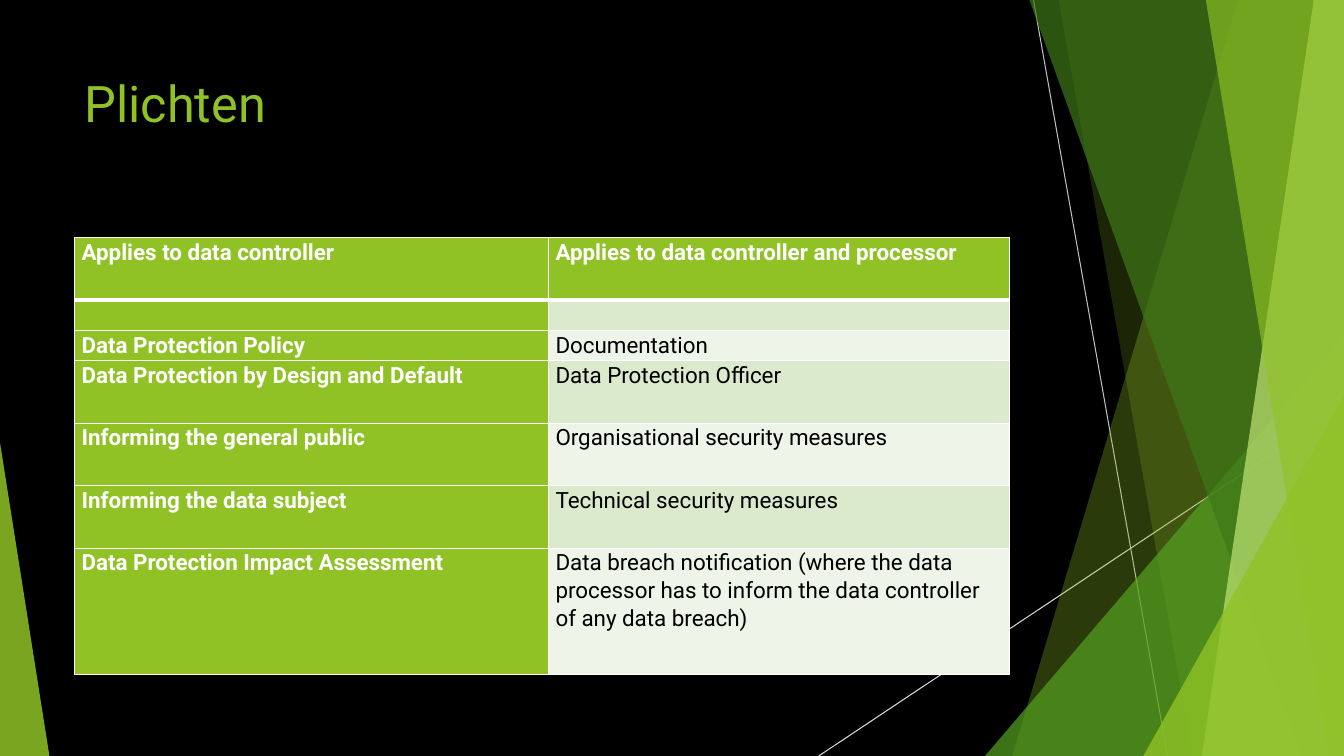
from dataclasses import dataclass
from lxml.etree import SubElement
from pptx import Presentation
from pptx.dml.color import RGBColor
from pptx.enum.shapes import MSO_CONNECTOR, MSO_SHAPE
from pptx.oxml.ns import qn
from pptx.util import Inches, Pt

COLORS = {
    "black": "000000", "white": "FFFFFF", "lime": "90C226",
    "green": "54A021", "forest": "3F7819", "pale": "C0E474",
    "silver": "BFBFBF", "light": "D9D9D9", "odd": "DBE9CD", "even": "EEF4E8",
}
FONT = "Roboto"
WIDTH, HEIGHT = 13.33, 7.5


@dataclass
class Ray:
    start: tuple[float, float]
    end: tuple[float, float]
    color: str


@dataclass
class Band:
    top: float
    base: float
    color: str
    alpha: int


@dataclass
class Wedge:
    left: float
    top: float
    width: float
    tip: float
    color: str
    alpha: int


RAYS = [
    Ray((10.25, 0), (11.58, HEIGHT), "silver"),
    Ray((WIDTH, 4.03), (8.12, HEIGHT), "light"),
]
PANELS = [
    Band(12.28, 10.04, "lime", 30),
    Band(10.5, 11.83, "lime", 20),
    Wedge(9.77, 3.33, 3.56, 1, "green", 72),
    Band(10.21, 12.91, "forest", 70),
    Band(13.03, 11.92, "pale", 70),
    Band(11.96, 13.18, "lime", 65),
    Wedge(11.34, 3.93, 1.99, 1, "lime", 80),
    Wedge(0, 4.39, 0.49, 0, "lime", 85),
]
DUTIES = [
    ("Applies to data controller", "Applies to data controller and processor"),
    ("", ""),
    ("Data Protection Policy", "Documentation"),
    ("Data Protection by Design and Default", "Data Protection Officer"),
    ("Informing the general public", "Organisational security measures"),
    ("Informing the data subject", "Technical security measures"),
    ("Data Protection Impact Assessment",
     "Data breach notification (where the data processor has to inform "
     "the data controller of any data breach)"),
]
COLS = [4.7, 4.57]
ROWS = [0.62, 0.3, 0.3, 0.62, 0.62, 0.62, 1.25]


def get_color(name: str) -> RGBColor:
    return RGBColor.from_string(COLORS[name])


def paint(shape, color: str, alpha: int) -> None:
    shape.shadow.inherit = False
    shape.line.fill.background()
    shape.fill.solid()
    shape.fill.fore_color.rgb = get_color(color)
    tone = shape.fill._xPr.find(qn("a:solidFill"))[0]
    SubElement(tone, qn("a:alpha"), val=str(alpha * 1000))


def draw_ray(slide, ray: Ray) -> None:
    ends = [Inches(v) for v in ray.start + ray.end]
    line = slide.shapes.add_connector(MSO_CONNECTOR.STRAIGHT, *ends)
    line.line.color.rgb = get_color(ray.color)
    line.line.width = Pt(0.75)
    SubElement(line._element.spPr, qn("a:effectLst"))


def draw_band(slide, band: Band) -> None:
    pen = slide.shapes.build_freeform(Inches(band.top), 0)
    corners = [(WIDTH, 0), (WIDTH, HEIGHT), (band.base, HEIGHT)]
    pen.add_line_segments([(Inches(x), Inches(y)) for x, y in corners], close=True)
    paint(pen.convert_to_shape(), band.color, band.alpha)


def draw_wedge(slide, wedge: Wedge) -> None:
    shape = slide.shapes.add_shape(
        MSO_SHAPE.ISOSCELES_TRIANGLE, Inches(wedge.left), Inches(wedge.top),
        Inches(wedge.width), Inches(HEIGHT - wedge.top))
    shape.adjustments[0] = wedge.tip
    paint(shape, wedge.color, wedge.alpha)


def style_font(font, size: int, color: str, bold: bool) -> None:
    font.name = FONT
    font.size = Pt(size)
    font.bold = bold
    font.color.rgb = get_color(color)


def draw_title(slide) -> None:
    box = slide.shapes.add_textbox(Inches(0.74), Inches(0.67), Inches(9.4), Inches(1.44))
    box.text_frame.word_wrap = True
    box.text_frame.text = "Plichten"
    style_font(box.text_frame.paragraphs[0].runs[0].font, 36, "lime", False)


def add_edges(cell, row: int) -> None:
    props = cell._tc.get_or_add_tcPr()
    widths = {"L": 1, "R": 1, "T": 3 if row == 1 else 1, "B": 3 if row == 0 else 1}
    for side, width in widths.items():
        edge = SubElement(props, qn(f"a:ln{side}"), w=str(Pt(width)))
        fill = SubElement(edge, qn("a:solidFill"))
        SubElement(fill, qn("a:srgbClr"), val=COLORS["white"])


def fill_cell(cell, row: int, col: int, text: str) -> None:
    strong = row == 0 or col == 0
    add_edges(cell, row)
    cell.fill.solid()
    shade = "lime" if strong else "odd" if row % 2 else "even"
    cell.fill.fore_color.rgb = get_color(shade)
    cell.margin_left = cell.margin_right = Inches(0.07)
    cell.margin_top = cell.margin_bottom = 0
    cell.text_frame.text = text
    para = cell.text_frame.paragraphs[0]
    if text:
        para.line_spacing = 1.07
        para.space_after = Pt(8)
    for run in para.runs:
        style_font(run.font, 16, "white" if strong else "black", strong)


def draw_table(slide) -> None:
    table = slide.shapes.add_table(
        len(ROWS), len(COLS), Inches(0.74), Inches(2.36),
        Inches(sum(COLS)), Inches(sum(ROWS))).table
    for col, width in zip(table.columns, COLS):
        col.width = Inches(width)
    for row, height in zip(table.rows, ROWS):
        row.height = Inches(height)
    for r, texts in enumerate(DUTIES):
        for c, text in enumerate(texts):
            fill_cell(table.cell(r, c), r, c, text)


def main() -> None:
    deck = Presentation()
    deck.slide_width, deck.slide_height = Inches(WIDTH), Inches(HEIGHT)
    slide = deck.slides.add_slide(deck.slide_layouts[6])
    slide.background.fill.solid()
    slide.background.fill.fore_color.rgb = get_color("black")
    for ray in RAYS:
        draw_ray(slide, ray)
    for panel in PANELS:
        if isinstance(panel, Band):
            draw_band(slide, panel)
        else:
            draw_wedge(slide, panel)
    draw_title(slide)
    draw_table(slide)
    deck.save("out.pptx")


if __name__ == "__main__":
    main()
